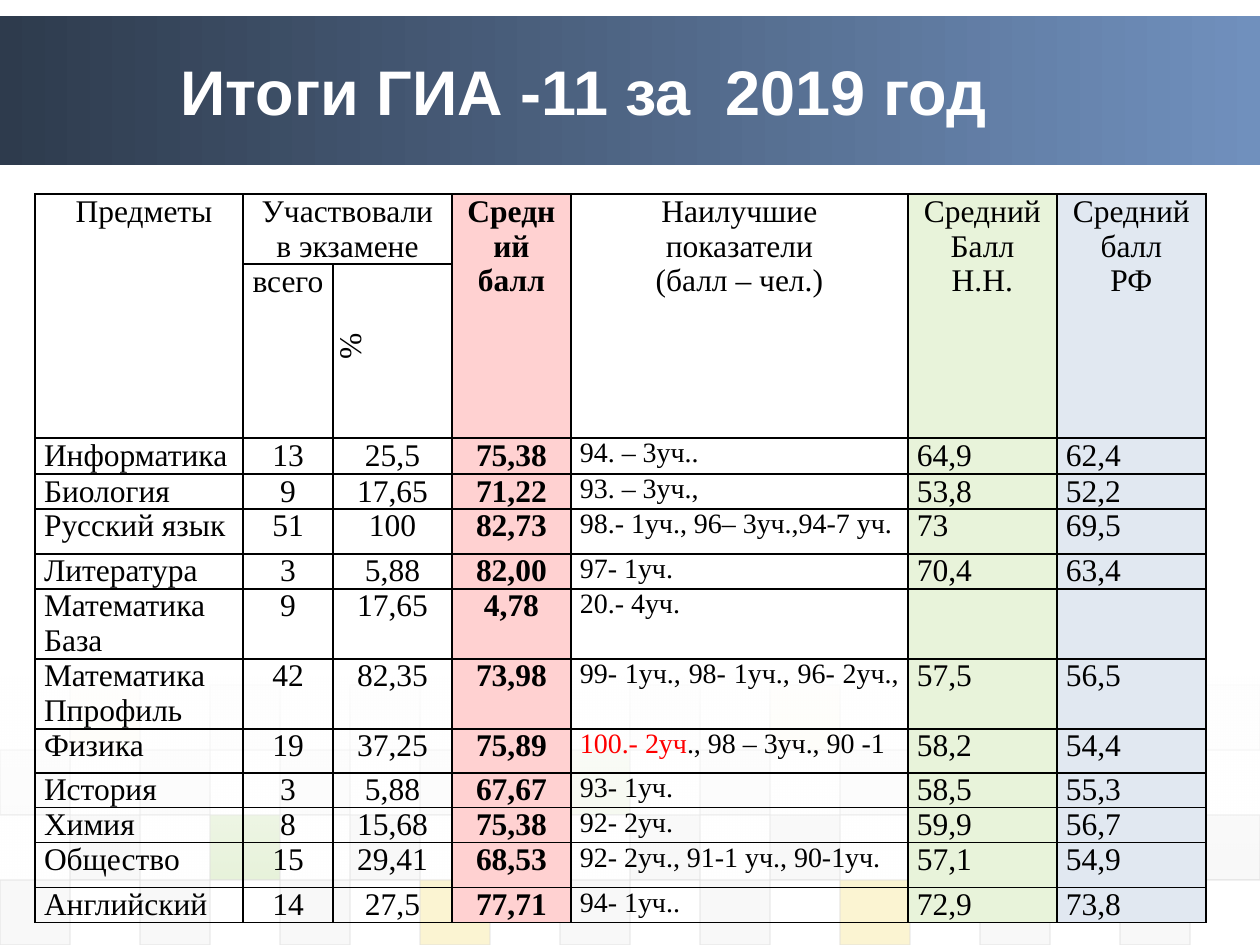
"""Build the slide with the 2019 state exam results."""
from dataclasses import dataclass

import pptx
import pptx.dml.color
import pptx.enum.shapes
import pptx.enum.text
import pptx.oxml
import pptx.oxml.ns
import pptx.util

ALIGN = pptx.enum.text.PP_ALIGN
QN = pptx.oxml.ns.qn
PINK, GREEN, BLUE = "FFD1D1", "E8F3DA", "E1E8F1"
TILE_COLOURS = {"d": "DDDDDD", "e": "EAEAEA", "g": "8AC246", "y": "EFC821"}
COLUMN_WIDTHS = (208, 90, 119, 119, 337, 149, 149)
ROW_HEIGHTS = (70, 174, 36, 34, 45, 35, 70, 70, 44, 35, 35, 45, 35)


@dataclass(frozen=True)
class TileRow:
    top: int
    first_column: int
    colours: str
    alpha: int


@dataclass(frozen=True)
class Style:
    align: ALIGN
    size: int = 18
    bold: bool = False
    fill: str | None = None


@dataclass(frozen=True)
class Header:
    row: int
    column: int
    lines: tuple[str, ...]
    style: Style
    rows: int = 1
    columns: int = 1
    indent: int = 0


CENTRED = Style(ALIGN.CENTER)
JUSTIFIED = Style(ALIGN.JUSTIFY)
AVERAGE = Style(ALIGN.CENTER, bold=True, fill=PINK)
BODY_STYLES = (
    JUSTIFIED, CENTRED, CENTRED, AVERAGE, Style(ALIGN.JUSTIFY, size=16),
    Style(ALIGN.JUSTIFY, fill=GREEN), Style(ALIGN.JUSTIFY, fill=BLUE),
)
TILE_ROWS = (
    TileRow(685, 1, "yeeydyege", 5),
    TileRow(750, 0, "ddddgdddy", 10),
    TileRow(815, 1, "dgddddgdd", 20),
    TileRow(880, 0, "dddyddydd", 20),
)
HEADERS = (
    Header(0, 0, ("Предметы",), CENTRED, rows=2, indent=10),
    Header(0, 1, ("Участвовали", "в экзамене"), CENTRED, columns=2),
    Header(0, 3, ("Средний", "балл"), AVERAGE, rows=2),
    Header(0, 4, ("Наилучшие", "показатели", "(балл – чел.)"), CENTRED, rows=2),
    Header(0, 5, ("Средний", "Балл Н.Н."), Style(ALIGN.CENTER, fill=GREEN), rows=2),
    Header(0, 6, ("Средний", "балл", "РФ"), Style(ALIGN.CENTER, fill=BLUE), rows=2),
    Header(1, 1, ("всего",), CENTRED),
    Header(1, 2, ("%",), CENTRED, indent=10),
)
RESULTS = (
    ("Информатика", "13", "25,5", "75,38", "94. – 3уч..", "64,9", "62,4"),
    ("Биология", "9", "17,65", "71,22", "93. – 3уч.,", "53,8", "52,2"),
    ("Русский язык", "51", "100", "82,73", "98.- 1уч., 96– 3уч.,94-7 уч.", "73", "69,5"),
    ("Литература", "3", "5,88", "82,00", "97- 1уч.", "70,4", "63,4"),
    ("Математика База", "9", "17,65", "4,78", "20.- 4уч.", "", ""),
    ("Математика Ппрофиль", "42", "82,35", "73,98", "99- 1уч., 98- 1уч., 96- 2уч., ", "57,5", "56,5"),
    ("Физика", "19", "37,25", "75,89", "100.- 2уч|., 98 – 3уч., 90 -1", "58,2", "54,4"),
    ("История", "3", "5,88", "67,67", "93- 1уч.", "58,5", "55,3"),
    ("Химия", "8", "15,68", "75,38", "92- 2уч.", "59,9", "56,7"),
    ("Общество", "15", "29,41", "68,53", "92- 2уч., 91-1 уч., 90-1уч.", "57,1", "54,9"),
    ("Английский", "14", "27,5", "77,71", "94- 1уч..", "72,9", "73,8"),
)


def px(length: int) -> pptx.util.Emu:
    return pptx.util.Emu(round(length * 914400 / 126))


def colour(value: str) -> pptx.dml.color.RGBColor:
    return pptx.dml.color.RGBColor.from_string(value)


def set_alphas(shape, *percents: int) -> None:
    for node, percent in zip(shape.element.spPr.iter(QN("a:srgbClr")), percents):
        alpha = node.makeelement(QN("a:alpha"), {"val": str(percent * 1000)})
        node.append(alpha)


def add_rectangle(page, left: int, top: int, width: int, height: int):
    shape = page.shapes.add_shape(
        pptx.enum.shapes.MSO_SHAPE.RECTANGLE, px(left), px(top), px(width), px(height))
    shape.shadow.inherit = False
    return shape


def add_gradient(page, top: int, height: int, start: str, end: str, angle: int):
    shape = add_rectangle(page, 0, top, 1260, height)
    shape.line.fill.background()
    shape.fill.gradient()
    shape.fill.gradient_angle = angle
    for stop, value, position in zip(shape.fill.gradient_stops, (start, end), (0, 1)):
        stop.color.rgb = colour(value)
        stop.position = position
    return shape


def add_tiles(page, row: TileRow) -> None:
    for index, code in enumerate(row.colours):
        tile = add_rectangle(page, 70 * (row.first_column + 2 * index), row.top, 70, 65)
        tile.fill.solid()
        tile.fill.fore_color.rgb = colour(TILE_COLOURS[code])
        tile.line.color.rgb = colour("DDDDDD")
        tile.line.width = pptx.util.Pt(0.75)
        set_alphas(tile, row.alpha, 60)


def set_title(page) -> None:
    title = page.shapes.title
    title.left, title.top, title.width, title.height = px(168), px(32), px(1018), px(116)
    frame = title.text_frame
    frame.text = "Итоги ГИА -11 за  2019 год"
    frame.vertical_anchor = pptx.enum.text.MSO_ANCHOR.MIDDLE
    para = frame.paragraphs[0]
    para.alignment = ALIGN.LEFT
    para.font.name, para.font.size, para.font.bold = "Arial", pptx.util.Pt(36), True
    para.font.color.rgb = colour("FFFFFF")
    page.shapes.element.append(title.element)


def set_borders(cell) -> None:
    properties = cell._tc.get_or_add_tcPr()
    for index, side in enumerate(("lnL", "lnR", "lnT", "lnB")):
        properties.insert(index, pptx.oxml.parse_xml(
            f'<a:{side} {pptx.oxml.ns.nsdecls("a")} w="12700"><a:solidFill>'
            f'<a:srgbClr val="000000"/></a:solidFill></a:{side}>'))


def fill_cell(cell, lines: tuple[str, ...], style: Style, indent: int = 0) -> None:
    cell.margin_left = cell.margin_right = px(9)
    cell.margin_top = cell.margin_bottom = 0
    if style.fill:
        cell.fill.solid()
        cell.fill.fore_color.rgb = colour(style.fill)
    frame = cell.text_frame
    for index, line in enumerate(lines):
        para = frame.add_paragraph() if index else frame.paragraphs[0]
        para.alignment = style.align
        if indent:
            para._p.get_or_add_pPr().set("marL", str(px(indent)))
        para.font.name, para.font.size = "Times New Roman", pptx.util.Pt(style.size)
        para.font.bold = style.bold
        para.font.color.rgb = colour("000000")
        highlight, separator, rest = line.partition("|")
        for text in filter(None, (highlight, rest)):
            para.add_run().text = text
        if separator:
            para.runs[0].font.color.rgb = colour("FF0000")


def add_results(page) -> None:
    table = page.shapes.add_table(
        len(ROW_HEIGHTS), len(COLUMN_WIDTHS), px(35), px(194),
        px(sum(COLUMN_WIDTHS)), px(sum(ROW_HEIGHTS))).table
    table.first_row = table.horz_banding = False
    for column, width in zip(table.columns, COLUMN_WIDTHS):
        column.width = px(width)
    for row, height in zip(table.rows, ROW_HEIGHTS):
        row.height = px(height)
    for cell in table.iter_cells():
        cell.fill.background()
        set_borders(cell)
    for header in HEADERS:
        cell = table.cell(header.row, header.column)
        if header.rows * header.columns > 1:
            cell.merge(table.cell(
                header.row + header.rows - 1, header.column + header.columns - 1))
        fill_cell(cell, header.lines, header.style, header.indent)
    table.cell(1, 2)._tc.get_or_add_tcPr().set("vert", "vert270")
    for row, values in enumerate(RESULTS, start=2):
        for column, (value, style) in enumerate(zip(values, BODY_STYLES)):
            fill_cell(table.cell(row, column), (value,), style)


def main() -> None:
    deck = pptx.Presentation()
    deck.slide_width, deck.slide_height = px(1260), px(945)
    page = deck.slides.add_slide(deck.slide_layouts[5])
    add_gradient(page, 16, 149, "2E3B4D", "7090BD", 0)
    for row in TILE_ROWS:
        add_tiles(page, row)
    veil = add_gradient(page, 677, 204, "FFFFFF", "FFFFFF", 270)
    set_alphas(veil, 90, 0)
    set_title(page)
    add_results(page)
    deck.save("out.pptx")


if __name__ == "__main__":
    main()
